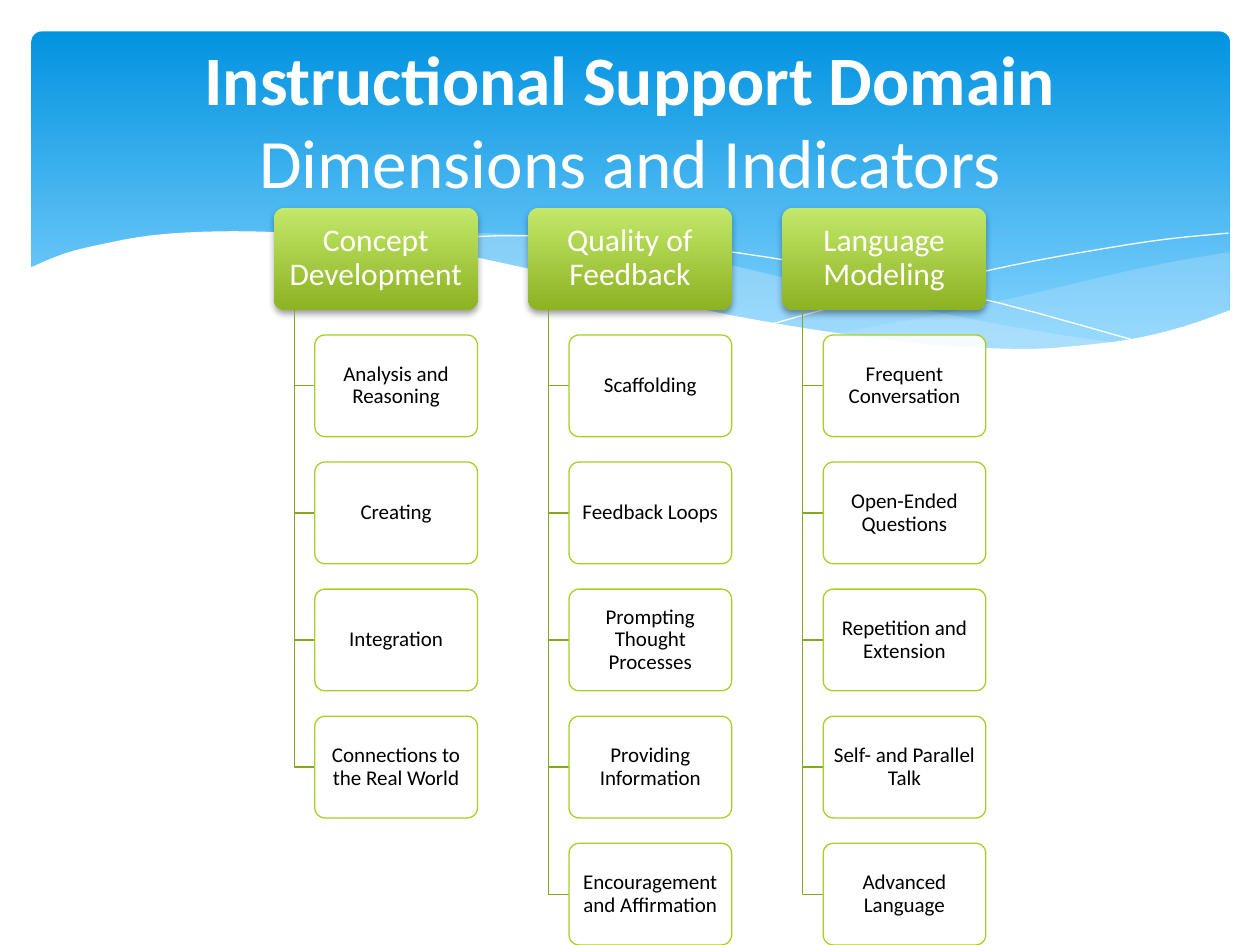
from lxml import etree
from pptx import Presentation
from pptx.dml.color import RGBColor
from pptx.enum.shapes import MSO_SHAPE
from pptx.enum.text import MSO_ANCHOR, PP_ALIGN
from pptx.oxml.ns import qn
from pptx.util import Inches, Pt

# Content
TITLE = ("Instructional Support Domain", "Dimensions and Indicators")
DIMENSIONS = {
    "Concept Development": [
        "Analysis and Reasoning", "Creating", "Integration",
        "Connections to the Real World"],
    "Quality of Feedback": [
        "Scaffolding", "Feedback Loops", "Prompting Thought Processes",
        "Providing Information", "Encouragement and Affirmation"],
    "Language Modeling": [
        "Frequent Conversation", "Open-Ended Questions",
        "Repetition and Extension", "Self- and Parallel Talk",
        "Advanced Language"],
}
COLORS = {
    "sky_top": "0293E0", "sky_bottom": "83D3FE", "wave": "C6E7FC",
    "white": "FFFFFF", "black": "000000", "green_top": "C3E86A",
    "green_bottom": "8DB222", "card_edge": "A5D028", "branch": "84A720",
}
FONT = "Calibri"

# Banner waves: each outline is a chain of smooth edges
RIGHT_WAVE = [
    [(9.76, 2), (9.35, 2.07), (8.91, 2.16), (8.32, 2.3), (7.53, 2.48), (6.61, 2.65)],
    [(6.61, 2.65), (7.05, 2.71), (7.45, 2.75), (8.03, 2.78), (8.54, 2.76),
     (8.97, 2.7), (9.35, 2.62), (9.76, 2.47)],
]
MIDDLE_WAVE = [
    [(8.93, 2.73), (8.37, 2.65), (7.75, 2.54), (7.06, 2.4), (6.29, 2.22),
     (5.69, 2.08), (5.14, 1.98), (4.65, 1.91), (4.2, 1.87), (3.8, 1.85),
     (3.28, 1.87), (2.86, 1.91)],
    [(2.86, 1.91), (3.42, 1.99), (4.04, 2.11), (4.91, 2.32), (5.66, 2.48),
     (6.34, 2.61), (6.95, 2.7), (7.48, 2.76), (8.07, 2.78), (8.57, 2.77),
     (8.93, 2.73)],
]
LONG_LINE = [[
    (3.09, 1.95), (3.35, 1.91), (3.74, 1.88), (4.16, 1.87), (4.69, 1.89),
    (5.33, 1.94), (6.08, 2.04), (6.95, 2.19), (7.95, 2.41), (9.07, 2.72)]]
SHORT_LINE = [[
    (6.13, 2.57), (6.72, 2.41), (7.48, 2.23), (8.06, 2.1), (8.66, 1.99),
    (9.24, 1.9), (9.75, 1.85)]]
WHITE_WAVE = [
    [(9.77, 2.46), (9.4, 2.59), (8.99, 2.69), (8.5, 2.75), (8.09, 2.77),
     (7.44, 2.74), (6.68, 2.65), (5.79, 2.5), (5.03, 2.33), (4.18, 2.13),
     (3.4, 1.97), (2.71, 1.88), (2.11, 1.84), (1.61, 1.84), (1.19, 1.87),
     (0.85, 1.93), (0.52, 2.01), (0.23, 2.13)],
    [(0.23, 3.29), (9.77, 3.29)],
]

# Chart grid: the card height is the unit
SLIDE_W, SLIDE_H = 10, 7.5
CHART_TOP = 0.22 * SLIDE_H
ROWS = 1 + max(map(len, DIMENSIONS.values()))
ROW_GAP, COLUMN_GAP, HEAD_W, INDENT = 0.25, 0.5, 2, 0.4
UNIT = (SLIDE_H - CHART_TOP) / (ROWS + (ROWS - 1) * ROW_GAP)
ROW_STEP = UNIT * (1 + ROW_GAP)
COLUMN_STEP = UNIT * (HEAD_W + COLUMN_GAP)
CHART_LEFT = (SLIDE_W - COLUMN_STEP * len(DIMENSIONS) + UNIT * COLUMN_GAP) / 2

prs = Presentation()
prs.slide_width, prs.slide_height = Inches(SLIDE_W), Inches(SLIDE_H)
slide = prs.slides.add_slide(prs.slide_layouts[6])


def rgb(name):
    return RGBColor.from_string(COLORS[name])


def fill_solid(shape, color, opacity=100):
    shape.fill.solid()
    shape.fill.fore_color.rgb = rgb(color)
    if opacity < 100:
        tint = shape.fill._xPr.find(qn("a:solidFill"))[0]
        etree.SubElement(tint, qn("a:alpha"), val=str(opacity * 1000))


def fill_gradient(shape, top, bottom, end=1):
    shape.fill.gradient()
    shape.fill.gradient_angle = 270
    for stop, color, position in zip(shape.fill.gradient_stops, (top, bottom), (0, end)):
        stop.color.rgb = rgb(color)
        stop.position = position


def set_line(shape, color=None, width=0):
    if color:
        shape.line.color.rgb = rgb(color)
        shape.line.width = Pt(width)
    else:
        shape.line.fill.background()


def rounded_box(left, top, width, height, radius):
    box = slide.shapes.add_shape(
        MSO_SHAPE.ROUNDED_RECTANGLE, *map(Inches, (left, top, width, height)))
    box.adjustments[0] = radius
    box.shadow.inherit = False
    return box


def outline(points, close):
    start, *rest = [(Inches(x), Inches(y)) for x, y in points]
    builder = slide.shapes.build_freeform(*start, scale=1.0)
    builder.add_line_segments(rest, close=close)
    shape = builder.convert_to_shape()
    shape.shadow.inherit = False
    if not close:
        shape.fill.background()
    return shape


def smooth(edge, steps=4):
    """Catmull-Rom points along one edge."""
    padded = [edge[0], *edge, edge[-1]]
    curve = [edge[0]]
    for knots in zip(padded, padded[1:], padded[2:], padded[3:]):
        for t in (step / steps for step in range(1, steps + 1)):
            curve.append(tuple(
                (2 * b + (c - a) * t + (2 * a - 5 * b + 4 * c - d) * t ** 2
                 + (3 * b - a - 3 * c + d) * t ** 3) / 2
                for a, b, c, d in zip(*knots)))
    return curve


def wave(edges, close):
    return outline([point for edge in edges for point in smooth(edge)], close)


def label(box, text, size, color, margin_x, margin_y):
    frame = box.text_frame
    frame.word_wrap = True
    frame.vertical_anchor = MSO_ANCHOR.MIDDLE
    frame.margin_left = frame.margin_right = Inches(margin_x)
    frame.margin_top = frame.margin_bottom = Inches(margin_y)
    line = frame.paragraphs[0]
    line.text = text
    line.alignment = PP_ALIGN.CENTER
    line.line_spacing = 0.9
    line.font.name, line.font.size = FONT, Pt(size)
    line.font.color.rgb = rgb(color)


def drop_shadow(shape):
    effects = shape._element.spPr.find(qn("a:effectLst"))
    shadow = etree.SubElement(
        effects, qn("a:outerShdw"), blurRad=str(Pt(4)), dist=str(Pt(2)),
        dir="5400000", rotWithShape="0")
    black = etree.SubElement(shadow, qn("a:srgbClr"), val=COLORS["black"])
    etree.SubElement(black, qn("a:alpha"), val="38000")


# Banner
banner = rounded_box(0.25, 0.25, 9.51, 2.7, 0.03)
fill_gradient(banner, "sky_top", "sky_bottom", 0.9)
set_line(banner)
for edges, opacity in ((RIGHT_WAVE, 29), (MIDDLE_WAVE, 40)):
    ribbon = wave(edges, True)
    fill_solid(ribbon, "wave", opacity)
    set_line(ribbon)
for edges in (LONG_LINE, SHORT_LINE):
    set_line(wave(edges, False), "white")
white_wave = wave(WHITE_WAVE, True)
fill_solid(white_wave, "white")
set_line(white_wave)

# Dimensions with their indicators
for column, (dimension, indicators) in enumerate(DIMENSIONS.items()):
    left = CHART_LEFT + column * COLUMN_STEP
    head = rounded_box(left, CHART_TOP, HEAD_W * UNIT, UNIT, 0.1)
    fill_gradient(head, "green_top", "green_bottom")
    set_line(head)
    drop_shadow(head)
    label(head, dimension, 18, "white", 0.04, 0.03)

    trunk_x, card_x = left + INDENT * UNIT / 2, left + INDENT * UNIT
    for row, indicator in enumerate(indicators, 1):
        top = CHART_TOP + row * ROW_STEP
        middle = top + UNIT / 2
        branch = outline(
            [(trunk_x, CHART_TOP + UNIT), (trunk_x, middle), (card_x, middle)], False)
        set_line(branch, "branch", 0.75)
        card = rounded_box(card_x, top, (HEAD_W - INDENT) * UNIT, UNIT, 0.1)
        fill_solid(card, "white", 90)
        set_line(card, "card_edge", 0.75)
        label(card, indicator, 12, "black", 0.03, 0.02)

# Title
title = slide.shapes.add_textbox(*map(Inches, (0.5, 0.37, 9, 1.15)))
title.text_frame.word_wrap = True
title.text_frame.vertical_anchor = MSO_ANCHOR.MIDDLE
heading = title.text_frame.paragraphs[0]
heading.alignment = PP_ALIGN.CENTER
heading.font.name, heading.font.size = FONT, Pt(39.6)
heading.font.color.rgb = rgb("white")
heading.text = "\v".join(TITLE)
heading.runs[0].font.bold = True

prs.save("out.pptx")
